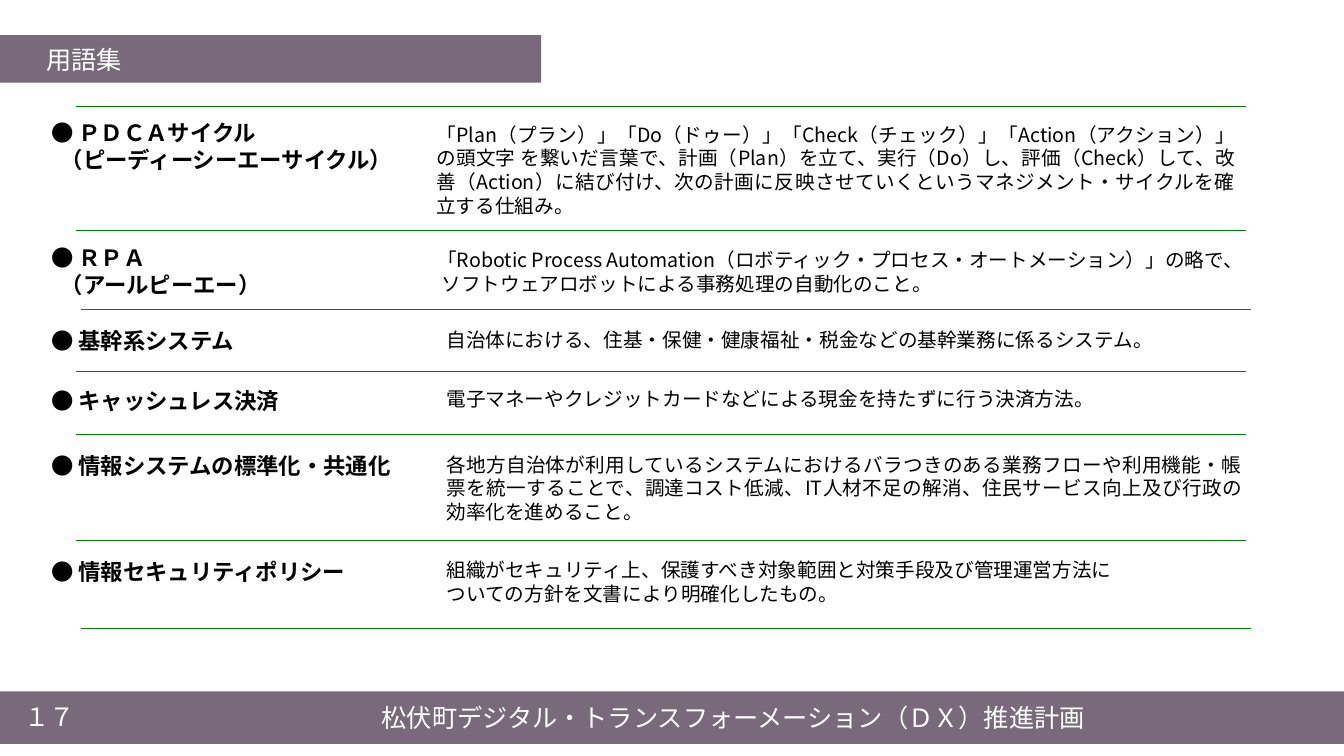
from lxml import etree
from pptx import Presentation
from pptx.dml.color import RGBColor
from pptx.enum.lang import MSO_LANGUAGE_ID
from pptx.enum.shapes import MSO_CONNECTOR, MSO_SHAPE
from pptx.enum.text import MSO_ANCHOR, MSO_AUTO_SIZE, PP_ALIGN
from pptx.oxml.ns import qn
from pptx.util import Pt

RECT = MSO_SHAPE.RECTANGLE
STRAIGHT = MSO_CONNECTOR.STRAIGHT
LEFT, MID, JUST = PP_ALIGN.LEFT, PP_ALIGN.CENTER, PP_ALIGN.JUSTIFY
TOP, CENTER = MSO_ANCHOR.TOP, MSO_ANCHOR.MIDDLE
FIXED, GROW = MSO_AUTO_SIZE.NONE, MSO_AUTO_SIZE.SHAPE_TO_FIT_TEXT
JA = MSO_LANGUAGE_ID.JAPANESE

FACE = "Noto Sans CJK JP"
HUES = {"bar": "78697B", "rule": "008000", "text": "000000", "light": "FFFFFF"}
WIDE, HIGH = 960, 540
TERM_X, RULE_LEN = 29.5, 836
HEAD, TERM, BODY = 18, 16, 14

# term top, term width, term lines, indent of second line
# body left, top, width, line count, body paragraphs, indent of second line
ROWS = [
    (81.4, 282, ["● ＰＤＣＡサイクル", "（ピーディーシーエーサイクル）"],
     304.6, 84.2, 584.6, 4,
     ["「Plan（プラン）」「Do（ドゥー）」「Check（チェック）」「Action（アクション）」の頭文字 "
      "を繋いだ言葉で、計画（Plan）を立て、実行（Do）し、評価（Check）して、改善（Action）に結び付け、"
      "次の計画に反映させていくというマネジメント・サイクルを確立する仕組み。"]),
    (170.6, 271, ["● ＲＰＡ", "（アールピーエー）"],
     305.3, 173.5, 639.4, 2,
     ["「Robotic Process Automation（ロボティック・プロセス・オートメーション）」の略で、",
      "ソフトウェアロボットによる事務処理の自動化のこと。"]),
    (230.4, 271, ["● 基幹系システム"],
     311.8, 230.4, 639.4, 1,
     ["自治体における、住基・保健・健康福祉・税金などの基幹業務に係るシステム。"]),
    (273, 271, ["● キャッシュレス決済"],
     311.8, 273, 639.4, 1,
     ["電子マネーやクレジットカードなどによる現金を持たずに行う決済方法。"]),
    (319.7, 271, ["● 情報システムの標準化・共通化"],
     311.8, 319.7, 582.5, 3,
     ["各地方自治体が利用しているシステムにおけるバラつきのある業務フローや利用機能・帳票を統一することで、"
      "調達コスト低減、IT人材不足の解消、住民サービス向上及び行政の効率化を進めること。"]),
    (395.3, 271, ["● 情報セキュリティポリシー"],
     311.8, 395.3, 639.4, 2,
     ["組織がセキュリティ上、保護すべき対象範囲と対策手段及び管理運営方法に",
      "ついての方針を文書により明確化したもの。"]),
]
RULES = [(54, 76.3), (54, 164.9), (57.6, 221), (54, 265),
         (54, 310.3), (54, 385.9), (57.6, 448.6)]


def hue(name):
    return RGBColor.from_string(HUES[name])


def write(frame, lines, size, color, align=LEFT, bold=False, anchor=TOP,
          fit=FIXED, indent=0):
    """Fill a text frame; lines after the first are indented."""
    frame.word_wrap = True
    frame.auto_size = fit
    frame.vertical_anchor = anchor
    for num, line in enumerate(lines):
        para = frame.add_paragraph() if num else frame.paragraphs[0]
        para.alignment = align
        if num and indent:
            props = para._p.get_or_add_pPr()
            props.set("marL", str(Pt(indent)))
            props.set("indent", "0")
        run = para.add_run()
        run.text = line
        font = run.font
        font.size, font.bold, font.language_id = Pt(size), bold, JA
        font.color.rgb = hue(color)
        font.name = FACE
        east = etree.SubElement(run._r.get_or_add_rPr(), qn("a:ea"))
        east.set("typeface", FACE)


def add_bar(slide, top, width, height):
    bar = slide.shapes.add_shape(RECT, 0, Pt(top), Pt(width), Pt(height))
    bar.shadow.inherit = False
    bar.fill.solid()
    bar.fill.fore_color.rgb = hue("bar")
    bar.line.fill.background()
    return bar


def add_text(slide, x, y, width, height, lines, size, color, **style):
    box = slide.shapes.add_textbox(Pt(x), Pt(y), Pt(width), Pt(height))
    write(box.text_frame, lines, size, color, **style)


def add_rule(slide, x, y):
    rule = slide.shapes.add_connector(STRAIGHT, Pt(x), Pt(y), Pt(x + RULE_LEN), Pt(y))
    rule.line.color.rgb = hue("rule")
    rule.line.width = Pt(0.5)
    etree.SubElement(rule._element.spPr, qn("a:effectLst"))


def add_row(slide, row):
    top, width, term, left, body_top, body_width, count, body = row
    add_text(slide, TERM_X, top, width, 7.2 + 19.2 * len(term), term, TERM, "text",
             bold=True, fit=GROW, indent=7)
    indent = 3 if len(term) > 1 else 0
    add_text(slide, left, body_top, body_width, 7.2 + 16.8 * count, body, BODY, "text",
             align=JUST, fit=GROW, indent=indent)


def set_title(slide, text):
    title = slide.shapes.title
    title.left, title.top = Pt(25.9), Pt(28.1)
    title.width, title.height = Pt(328.3), Pt(28.8)
    write(title.text_frame, [text], HEAD, "light")
    band = add_bar(slide, 25.2, 386.6, 33.8)
    title._element.addprevious(band._element)


def add_footer(slide, text, page):
    bar = add_bar(slide, 493.9, WIDE, 37.4)
    bar.text_frame.margin_left = Pt(94.5)
    write(bar.text_frame, [text], HEAD, "light", align=MID, anchor=CENTER)
    add_text(slide, -0.7, 494.6, 72, 34.6, [page], HEAD, "light",
             align=MID, anchor=CENTER)


def main():
    deck = Presentation()
    deck.slide_width, deck.slide_height = Pt(WIDE), Pt(HIGH)
    slide = deck.slides.add_slide(deck.slide_layouts[5])
    set_title(slide, "用語集")
    add_footer(slide, "松伏町デジタル・トランスフォーメーション（ＤＸ）推進計画", "１７")
    for row in ROWS:
        add_row(slide, row)
    for x, y in RULES:
        add_rule(slide, x, y)
    deck.save("out.pptx")


if __name__ == "__main__":
    main()
